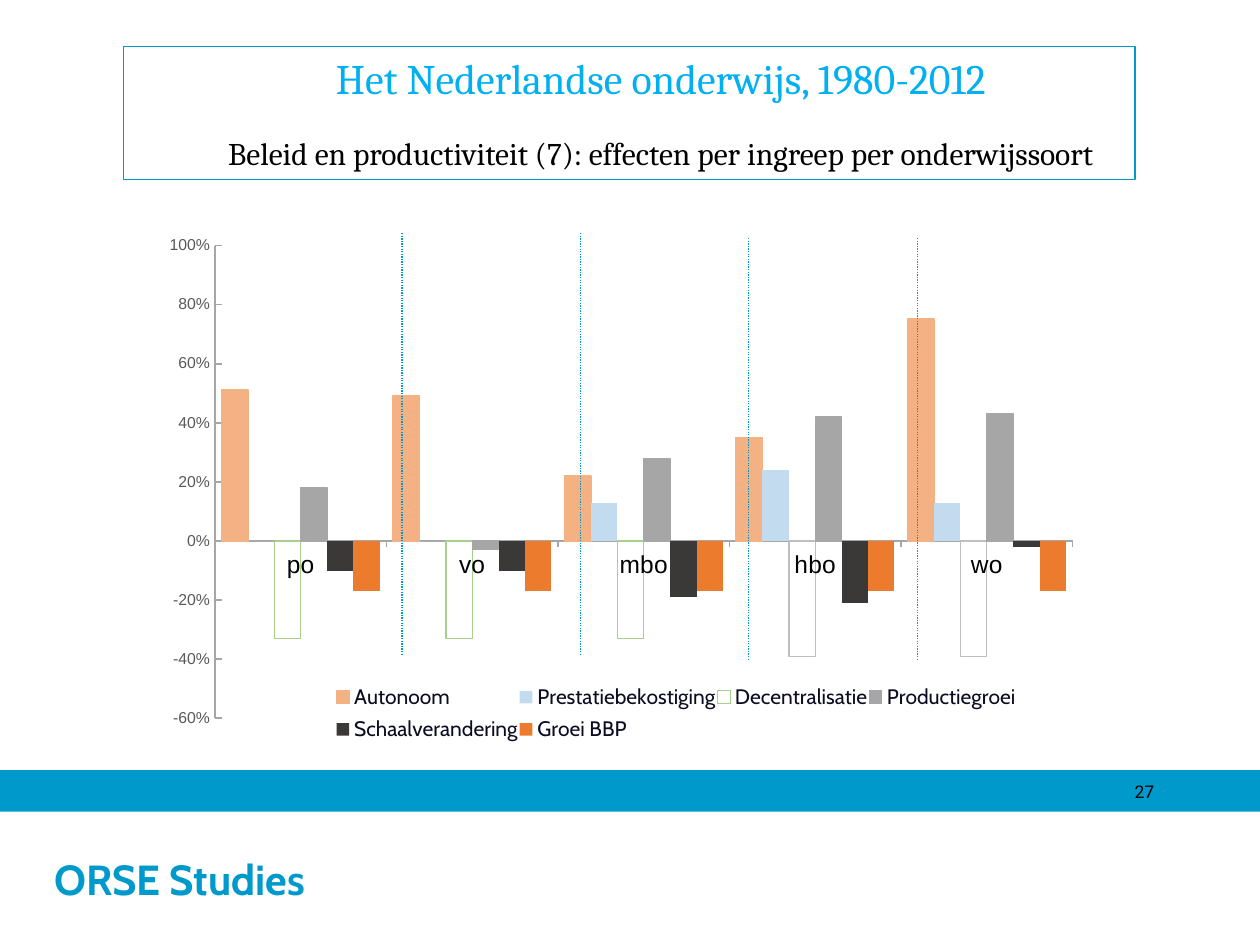
import dataclasses
import typing

import pptx
import pptx.chart.data
import pptx.dml.color
import pptx.enum.chart
import pptx.enum.dml
import pptx.enum.shapes
import pptx.enum.text
import pptx.oxml
import pptx.oxml.ns
import pptx.util

Pt = pptx.util.Pt
Inches = pptx.util.Inches
WIDTH, HEIGHT = 10, 7.5
COLORS = {
    "brand": "0099CC", "title": "00B0F0", "text": "000000", "white": "FFFFFF",
    "axis": "A6A6A6", "ticks": "595959", "legend": "0B0B22",
    "peach": "F4B183", "sky": "C3DBEF", "green": "A8D08D", "silver": "BFBFBF",
    "charcoal": "3B3838", "orange": "EC7B2D",
}
ALIGN = pptx.enum.text.PP_ALIGN


@dataclasses.dataclass
class Box:
    """Left, top, width and height as shares of the slide's size."""
    left: float
    top: float
    width: float
    height: float

    def lengths(self) -> tuple:
        return (Inches(self.left * WIDTH), Inches(self.top * HEIGHT),
                Inches(self.width * WIDTH), Inches(self.height * HEIGHT))


@dataclasses.dataclass
class Measure:
    name: str
    values: tuple
    fill: str
    line: typing.Optional[str] = None
    line_width: float = 0.75


@dataclasses.dataclass
class Divider:
    x: float
    top: float


MEASURES = [
    Measure("Autonoom", (0.51, 0.49, 0.22, 0.35, 0.75), "peach", "peach", 1),
    Measure("Prestatiebekostiging", (0, 0, 0.13, 0.24, 0.13), "sky"),
    Measure("Decentralisatie", (-0.33, -0.33, -0.33, -0.39, -0.39), "white", "green"),
    Measure("Productiegroei", (0.18, -0.03, 0.28, 0.42, 0.43), "axis", "axis"),
    Measure("Schaalverandering", (-0.1, -0.1, -0.19, -0.21, -0.02), "charcoal"),
    Measure("Groei BBP", (-0.17,) * 5, "orange"),
]
DIVIDERS = [Divider(3.19, 1.85), Divider(4.61, 1.85), Divider(5.94, 1.89), Divider(7.28, 1.89)]
DIVIDER_LENGTH = 3.34


def rgb(name: str) -> pptx.dml.color.RGBColor:
    return pptx.dml.color.RGBColor.from_string(COLORS[name])


def paint(part, fill: typing.Optional[str], line: typing.Optional[str], width: float = 0.75) -> None:
    if fill:
        part.fill.solid()
        part.fill.fore_color.rgb = rgb(fill)
    else:
        part.fill.background()
    if line:
        part.line.color.rgb = rgb(line)
        part.line.width = Pt(width)
    else:
        part.line.fill.background()


def style(font, size: float, face: str, color: str, bold: bool = False) -> None:
    font.size, font.name, font.bold = Pt(size), face, bold
    font.color.rgb = rgb(color)


def add_panel(slide, box: Box, fill: typing.Optional[str], line: typing.Optional[str]):
    panel = slide.shapes.add_shape(pptx.enum.shapes.MSO_SHAPE.RECTANGLE, *box.lengths())
    panel.shadow.inherit = False
    paint(panel, fill, line)
    return panel


def add_layout(parent, index: int, inner: bool, x: float, y: float, w: float, h: float) -> None:
    target = '<c:layoutTarget val="inner"/>' if inner else ""
    sizes = "".join(f'<c:{tag} val="{value}"/>' for tag, value in zip("xywh", (x, y, w, h)))
    for old in parent.findall(pptx.oxml.ns.qn("c:layout")):
        parent.remove(old)
    parent.insert(index, pptx.oxml.parse_xml(
        f'<c:layout {pptx.oxml.ns.nsdecls("c")}><c:manualLayout>{target}'
        f'<c:xMode val="edge"/><c:yMode val="edge"/>{sizes}</c:manualLayout></c:layout>'))


def style_axis(axis, size: float, color: str, line_width: float, major, minor) -> None:
    style(axis.tick_labels.font, size, "Arial", color)
    axis.format.line.color.rgb = rgb("axis")
    axis.format.line.width = Pt(line_width)
    axis.has_major_gridlines = False
    axis.major_tick_mark, axis.minor_tick_mark = major, minor


def add_effects_chart(slide, box: Box) -> None:
    data = pptx.chart.data.CategoryChartData(number_format="0%")
    data.categories = ["po", "vo", "mbo", "hbo", "wo"]
    for measure in MEASURES:
        data.add_series(measure.name, measure.values)
    kind = pptx.enum.chart.XL_CHART_TYPE.COLUMN_CLUSTERED
    chart = slide.shapes.add_chart(kind, *box.lengths(), data).chart
    style(chart.font, 10, "Roboto", "text")
    chart.has_title = False

    # Columns
    plot = chart.plots[0]
    plot.gap_width, plot.overlap, plot.vary_by_categories = 50, 0, False
    for series, measure in zip(plot.series, MEASURES):
        series.invert_if_negative = False
        paint(series.format, measure.fill, measure.line, measure.line_width)
    for higher_education in (3, 4):
        paint(plot.series[2].points[higher_education].format, "white", "silver")

    # Axes
    tick = pptx.enum.chart.XL_TICK_MARK
    style_axis(chart.category_axis, 14, "text", 0.75, tick.NONE, tick.OUTSIDE)
    style_axis(chart.value_axis, 9, "ticks", 1, tick.INSIDE, tick.NONE)
    percent = chart.value_axis
    percent.minimum_scale, percent.maximum_scale, percent.major_unit = -0.6, 1, 0.2
    percent.tick_labels.number_format = "0%"
    percent.tick_labels.number_format_is_linked = False

    # Legend inside the plot
    chart.has_legend = True
    legend = chart.legend
    legend.position = pptx.enum.chart.XL_LEGEND_POSITION.RIGHT
    legend.include_in_layout = True
    style(legend.font, 12, "Cabin", "legend")
    add_layout(legend._element, 1, False, 0.18, 0.86, 0.74, 0.14)
    add_layout(plot._element.getparent(), 0, True, 0.05, 0.02, 0.93, 0.92)


def add_divider(slide, divider: Divider) -> None:
    x, top = Inches(divider.x), Inches(divider.top)
    line = slide.shapes.add_connector(
        pptx.enum.shapes.MSO_CONNECTOR.STRAIGHT, x, top, x, top + Inches(DIVIDER_LENGTH))
    line.line.color.rgb = rgb("brand")
    line.line.width = Pt(0.75)
    line.line.dash_style = pptx.enum.dml.MSO_LINE.ROUND_DOT
    line._element.spPr.append(pptx.oxml.parse_xml(
        f'<a:effectLst {pptx.oxml.ns.nsdecls("a")}/>'))


def add_title(slide, box: Box) -> None:
    frame = add_panel(slide, box, None, "brand").text_frame
    frame.word_wrap = True
    frame.vertical_anchor = pptx.enum.text.MSO_ANCHOR.TOP
    lines = [
        ("Het Nederlandse onderwijs, 1980-2012", 24, "title"),
        ("Beleid en productiviteit (7): effecten per ingreep per onderwijssoort", 18, "text"),
    ]
    for number, (words, size, color) in enumerate(lines):
        paragraph = frame.add_paragraph() if number else frame.paragraphs[0]
        paragraph.text, paragraph.level = words, 1
        paragraph.alignment, paragraph.space_after = ALIGN.CENTER, Pt(18)
        paragraph._p.get_or_add_pPr().set("marL", str(Inches(0.5)))
        style(paragraph.font, size, "Cambria", color)


def add_footer(slide) -> None:
    add_panel(slide, Box(0, 0.848, 1, 0.041), "brand", "brand")
    institute = add_panel(slide, Box(0, 0.859, 1, 0.141), "white", None).text_frame
    institute.margin_left, institute.word_wrap = Inches(0.43), False
    institute.vertical_anchor = pptx.enum.text.MSO_ANCHOR.MIDDLE
    name = institute.paragraphs[0]
    name.text, name.alignment = "ORSE Studies", ALIGN.LEFT
    style(name.font, 24, "Cabin", "brand", bold=True)
    add_panel(slide, Box(0, 0.816, 1, 0.032), "brand", "brand")

    page = slide.shapes.add_textbox(*Box(0.708, 0.82, 0.208, 0.033).lengths()).text_frame
    page.margin_left = page.margin_right = 0
    page.word_wrap = True
    number = page.paragraphs[0]
    number.text, number.alignment = "27", ALIGN.RIGHT
    style(number.font, 10, "Roboto", "text")


def main() -> None:
    deck = pptx.Presentation()
    deck.slide_width, deck.slide_height = Inches(WIDTH), Inches(HEIGHT)
    slide = deck.slides.add_slide(deck.slide_layouts[6])
    add_footer(slide)
    add_title(slide, Box(0.098, 0.049, 0.803, 0.141))
    add_effects_chart(slide, Box(0.134, 0.249, 0.732, 0.544))
    for divider in DIVIDERS:
        add_divider(slide, divider)
    deck.save("out.pptx")


if __name__ == "__main__":
    main()
